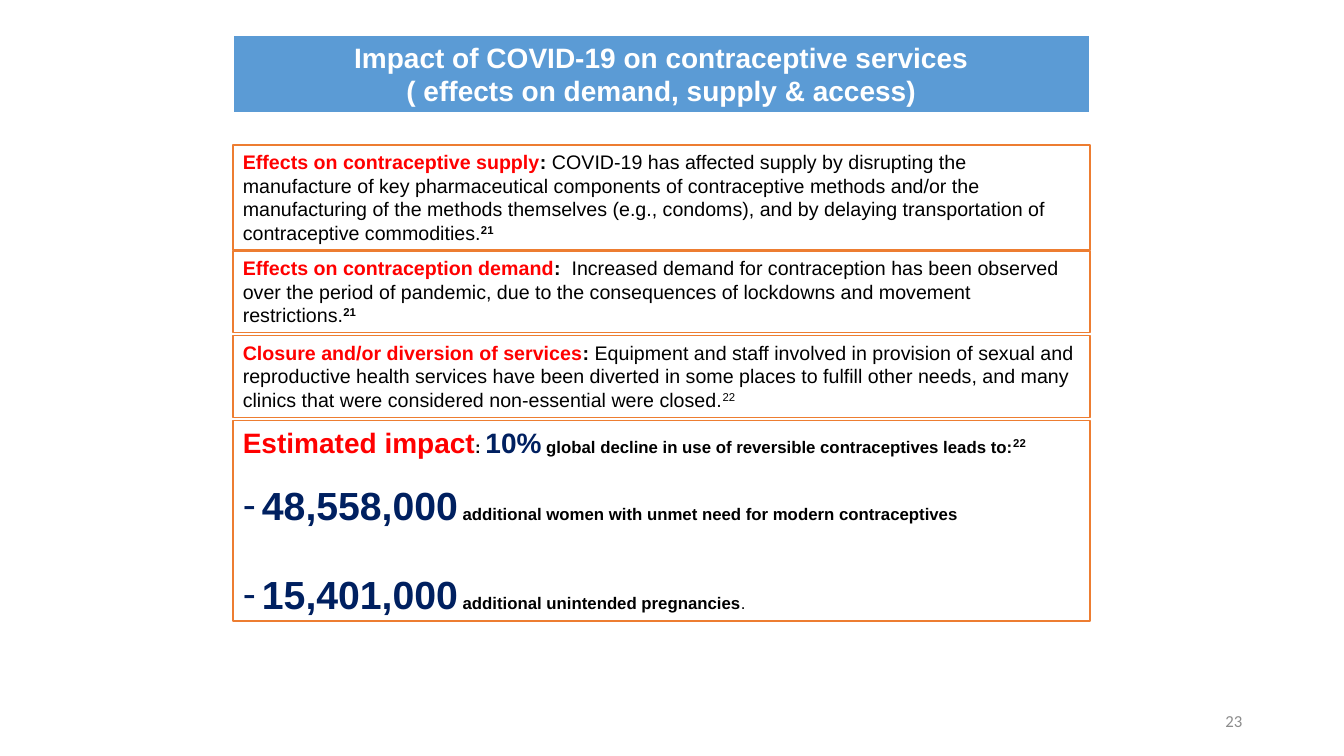
from lxml import etree
from pptx import Presentation, util as u
from pptx.dml import color
from pptx.enum import shapes, text
from pptx.oxml import ns

WIDTH, HEIGHT = u.Inches(13.33), u.Inches(7.5)
COLUMN_LEFT, COLUMN_WIDTH = 2.31 / 13.33, 8.5 / 13.33
RED, BLACK, NAVY, WHITE = "FF0000", "000000", "002060", "FFFFFF"
BLUE, ORANGE, GRAY = "5B9BD5", "ED7D31", "8C8C8C"


def rgb(value):
    return color.RGBColor.from_string(value)


def set_all(target, values):
    for name, value in values.items():
        setattr(target, name, value)


def words(content, size=14, hue=BLACK, bold=False, raised=False, font="Arial"):
    return content, {"size": u.Pt(size), "bold": bold, "name": font}, hue, raised


def write_paragraph(paragraph, runs, **values):
    set_all(paragraph, values)
    for content, font_values, hue, raised in runs:
        run = paragraph.add_run()
        run.text = content
        set_all(run.font, font_values)
        run.font.color.rgb = rgb(hue)
        if raised:
            run._r.get_or_add_rPr().set("baseline", "30000")


def add_dash(paragraph):
    properties = paragraph._p.get_or_add_pPr()
    indent = u.Inches(0.19)
    properties.set("marL", str(indent))
    properties.set("indent", str(-indent))
    etree.SubElement(properties, ns.qn("a:buFont")).set("typeface", "Arial")
    etree.SubElement(properties, ns.qn("a:buChar")).set("char", "-")


def add_panel(slide, top, height, fill=WHITE, line=ORANGE, weight=1):
    panel = slide.shapes.add_shape(
        shapes.MSO_SHAPE.RECTANGLE, int(WIDTH * COLUMN_LEFT), int(HEIGHT * top),
        int(WIDTH * COLUMN_WIDTH), int(HEIGHT * height))
    panel.shadow.inherit = False
    panel.fill.solid()
    panel.fill.fore_color.rgb = rgb(fill)
    panel.line.color.rgb = rgb(line)
    panel.line.width = u.Pt(weight)
    set_all(panel.text_frame, {
        "word_wrap": True,
        "auto_size": text.MSO_AUTO_SIZE.SHAPE_TO_FIT_TEXT,
        "vertical_anchor": text.MSO_ANCHOR.TOP,
    })
    return panel.text_frame


def add_title(slide, lines):
    frame = add_panel(slide, 0.35 / 7.5, 0.77 / 7.5, BLUE, WHITE, 1.5)
    for index, line in enumerate(lines):
        paragraph = frame.add_paragraph() if index else frame.paragraphs[0]
        write_paragraph(paragraph, [words(line, 20, WHITE, True)],
                        alignment=text.PP_ALIGN.CENTER)


def add_effect(slide, top, height, heading, separator, body, reference, bold_reference):
    frame = add_panel(slide, top, height)
    write_paragraph(frame.paragraphs[0], [
        words(heading, hue=RED, bold=True),
        words(separator, bold=True),
        words(body),
        words(reference, bold=bold_reference, raised=True),
    ], alignment=text.PP_ALIGN.LEFT)


def add_impact(slide, top, height, heading, figures):
    frame = add_panel(slide, top, height)
    write_paragraph(frame.paragraphs[0], heading, alignment=text.PP_ALIGN.LEFT)
    for gap, number, label in figures:
        paragraph = frame.add_paragraph()
        write_paragraph(paragraph, [words(number, 28, NAVY, True), *label],
                        alignment=text.PP_ALIGN.LEFT, space_before=u.Pt(gap))
        add_dash(paragraph)


def add_page_number(slide, number):
    box = slide.shapes.add_textbox(int(WIDTH * 9.42 / 13.33), int(HEIGHT * 6.95 / 7.5),
                                   int(WIDTH * 3 / 13.33), int(HEIGHT * 0.4 / 7.5))
    set_all(box.text_frame, {"word_wrap": True, "vertical_anchor": text.MSO_ANCHOR.MIDDLE})
    write_paragraph(box.text_frame.paragraphs[0], [words(number, 12, GRAY, font="Calibri")],
                    alignment=text.PP_ALIGN.RIGHT)


def main():
    presentation = Presentation()
    set_all(presentation, {"slide_width": WIDTH, "slide_height": HEIGHT})
    slide = presentation.slides.add_slide(presentation.slide_layouts[6])

    add_title(slide, ["Impact of COVID-19 on contraceptive services",
                      "( effects on demand, supply & access)"])
    add_effect(slide, 1.44 / 7.5, 1.04 / 7.5, "Effects on contraceptive supply", ": ",
               "COVID-19 has affected supply by disrupting the manufacture of key "
               "pharmaceutical components of contraceptive methods and/or the manufacturing "
               "of the methods themselves (e.g., condoms), and by delaying transportation "
               "of contraceptive commodities.", "21", True)
    add_effect(slide, 2.49 / 7.5, 0.81 / 7.5, "Effects on contraception demand", ":  ",
               "Increased demand for contraception has been observed over the period of "
               "pandemic, due to the consequences of lockdowns and movement restrictions.",
               "21", True)
    add_effect(slide, 3.33 / 7.5, 0.81 / 7.5, "Closure and/or diversion of services", ": ",
               "Equipment and staff involved in provision of sexual and reproductive health "
               "services have been diverted in some places to fulfill other needs, and many "
               "clinics that were considered non-essential were closed.", "22", False)
    add_impact(slide, 4.17 / 7.5, 1.99 / 7.5, [
        words("Estimated impact", 20, RED, True),
        words(": ", 12, bold=True),
        words("10%", 20, NAVY, True),
        words(" global decline in use of reversible contraceptives leads to:", 12, bold=True),
        words("22", bold=True, raised=True),
    ], [
        (16, "48,558,000", [
            words(" additional women with unmet need for modern contraceptives", 12, bold=True)]),
        (30, "15,401,000", [
            words(" ", 12),
            words("additional unintended pregnancies", 12, bold=True),
            words(".", 12)]),
    ])
    add_page_number(slide, "23")
    presentation.save("out.pptx")


if __name__ == "__main__":
    main()
